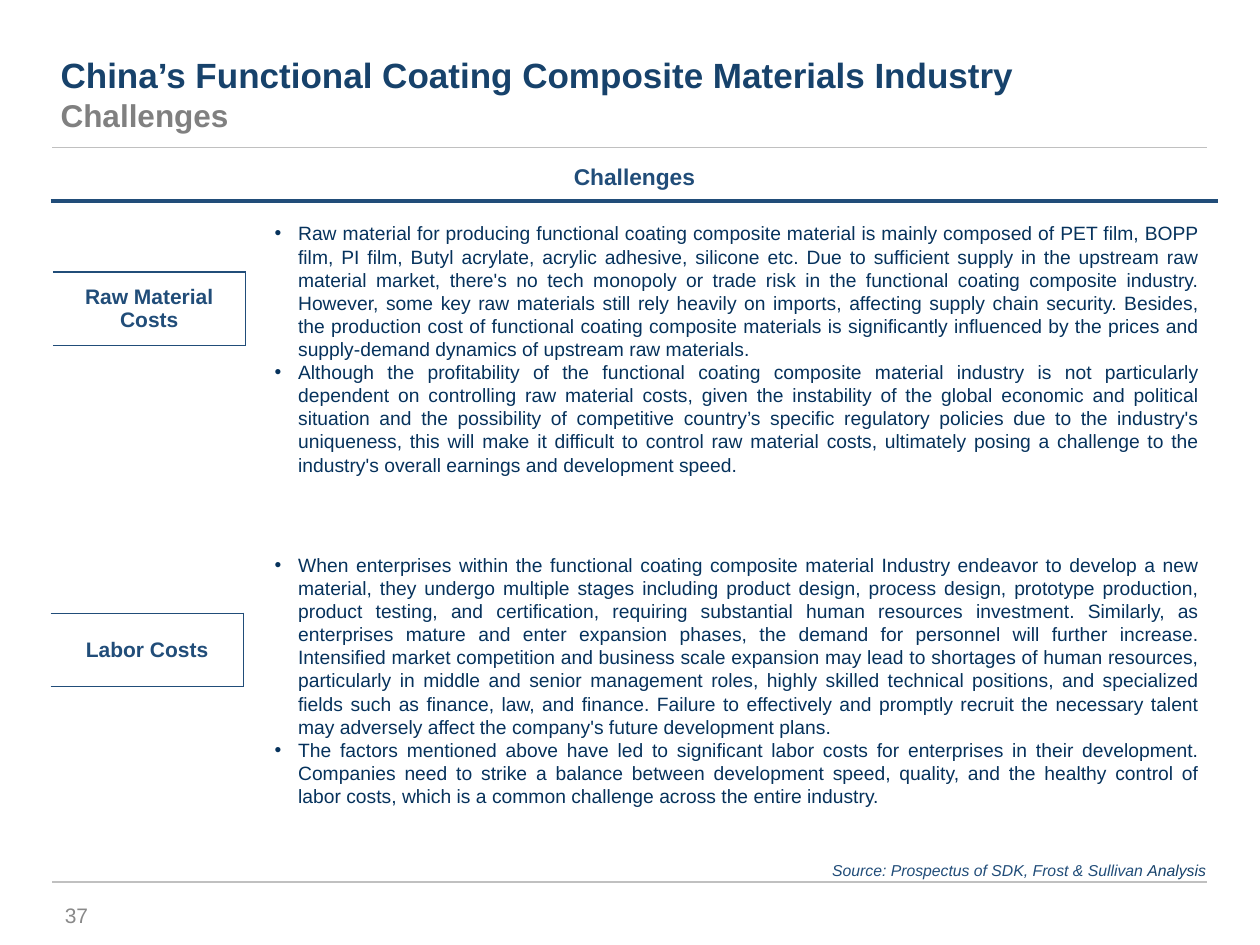
from dataclasses import dataclass

import pptx
import pptx.dml.color
import pptx.enum.text
import pptx.oxml
import pptx.oxml.ns
import pptx.util

Pt = pptx.util.Pt
ALIGN = pptx.enum.text.PP_ALIGN
ANCHOR = pptx.enum.text.MSO_ANCHOR
NS = pptx.oxml.ns.nsdecls("a")

NAVY, INK, DEEP = "214D79", "06325C", "17426B"
SILVER, GRAY, PAGE_GRAY, WHITE = "C0C0C0", "808080", "898989", "FFFFFF"
LABEL_WIDTH, LABEL_HEIGHT = 110.2, 41.8
BULLET_INDENT = 13.5


@dataclass
class Challenge:
    label: str
    label_left: float
    label_top: float
    body_top: float
    points: list[str]


CHALLENGES = [
    Challenge("Raw Material Costs", 30.2, 155.5, 123.1, [
        "Raw material for producing functional coating composite material is mainly "
        "composed of PET film, BOPP film, PI film, Butyl acrylate, acrylic adhesive, "
        "silicone etc. Due to sufficient supply in the upstream raw material market, "
        "there's no tech monopoly or trade risk in the functional coating composite "
        "industry. However, some key raw materials still rely heavily on imports, "
        "affecting supply chain security. Besides, the production cost of functional "
        "coating composite materials is significantly influenced by the prices and "
        "supply-demand dynamics of upstream raw materials.",
        "Although the profitability of the functional coating composite material "
        "industry is not particularly dependent on controlling raw material costs, "
        "given the instability of the global economic and political situation and the "
        "possibility of competitive country’s specific regulatory policies due to the "
        "industry's uniqueness, this will make it difficult to control raw material "
        "costs, ultimately posing a challenge to the industry's overall earnings and "
        "development speed.",
    ]),
    Challenge("Labor Costs", 29, 350.5, 312.5, [
        "When enterprises within the functional coating composite material Industry "
        "endeavor to develop a new material, they undergo multiple stages including "
        "product design, process design, prototype production, product testing, and "
        "certification, requiring substantial human resources investment. Similarly, "
        "as enterprises mature and enter expansion phases, the demand for personnel "
        "will further increase. Intensified market competition and business scale "
        "expansion may lead to shortages of human resources, particularly in middle "
        "and senior management roles, highly skilled technical positions, and "
        "specialized fields such as finance, law, and finance. Failure to effectively "
        "and promptly recruit the necessary talent may adversely affect the company's "
        "future development plans.",
        "The factors mentioned above have led to significant labor costs for "
        "enterprises in their development. Companies need to strike a balance between "
        "development speed, quality, and the healthy control of labor costs, which is "
        "a common challenge across the entire industry.",
    ]),
]


def rgb(color: str) -> pptx.dml.color.RGBColor:
    return pptx.dml.color.RGBColor.from_string(color)


def add_run(paragraph, text: str, size: float, color: str,
            bold: bool = False, italic: bool = False) -> None:
    run = paragraph.add_run()
    run.text = text
    run.font.name = "Arial"
    run.font.size = Pt(size)
    run.font.bold = bold
    run.font.italic = italic
    run.font.color.rgb = rgb(color)


def add_frame(slide, left: float, top: float, width: float, height: float):
    box = slide.shapes.add_textbox(Pt(left), Pt(top), Pt(width), Pt(height))
    box.text_frame.word_wrap = True
    return box.text_frame


def add_rule(slide, left: float, right: float, y: float, color: str, weight: float) -> None:
    rule = slide.shapes.add_connector(
        pptx.enum.shapes.MSO_CONNECTOR.STRAIGHT, Pt(left), Pt(y), Pt(right), Pt(y))
    rule.line.color.rgb = rgb(color)
    rule.line.width = Pt(weight)
    rule._element.spPr.append(pptx.oxml.parse_xml(f"<a:effectLst {NS}/>"))


def add_label(slide, challenge: Challenge) -> None:
    """One-cell table, open on its left side."""
    table = slide.shapes.add_table(
        1, 1, Pt(challenge.label_left), Pt(challenge.label_top),
        Pt(LABEL_WIDTH), Pt(LABEL_HEIGHT)).table
    table.first_row = table.horz_banding = False
    cell = table.cell(0, 0)
    cell.vertical_anchor = ANCHOR.MIDDLE
    cell.fill.solid()
    cell.fill.fore_color.rgb = rgb(WHITE)
    ink = f'<a:solidFill><a:srgbClr val="{NAVY}"/></a:solidFill>'
    borders = {"lnL": "<a:noFill/>", "lnR": ink, "lnT": ink, "lnB": ink}
    properties = cell._tc.get_or_add_tcPr()
    for position, (side, paint) in enumerate(borders.items()):
        properties.insert(position, pptx.oxml.parse_xml(
            f'<a:{side} {NS} w="{Pt(1)}">{paint}</a:{side}>'))
    paragraph = cell.text_frame.paragraphs[0]
    paragraph.alignment = ALIGN.CENTER
    add_run(paragraph, challenge.label, 12, NAVY, bold=True)


def add_points(slide, challenge: Challenge) -> None:
    frame = add_frame(slide, 149.8, challenge.body_top, 542.9, 154)
    for number, point in enumerate(challenge.points):
        paragraph = frame.add_paragraph() if number else frame.paragraphs[0]
        paragraph.alignment = ALIGN.JUSTIFY
        properties = paragraph._p.get_or_add_pPr()
        properties.set("marL", str(Pt(BULLET_INDENT)))
        properties.set("indent", str(-Pt(BULLET_INDENT)))
        properties.append(pptx.oxml.parse_xml(f'<a:buFont {NS} typeface="Arial"/>'))
        properties.append(pptx.oxml.parse_xml(f'<a:buChar {NS} char="•"/>'))
        add_run(paragraph, point, 11, INK)


def add_title(slide) -> None:
    title = slide.shapes.title
    title.left, title.top, title.width, title.height = Pt(27.4), Pt(29.5), Pt(684), Pt(48.2)
    frame = title.text_frame
    frame.auto_size = pptx.enum.text.MSO_AUTO_SIZE.NONE
    frame.vertical_anchor = ANCHOR.MIDDLE
    heading = frame.paragraphs[0]
    heading.alignment = ALIGN.LEFT
    add_run(heading, "China’s Functional Coating Composite Materials Industry", 20, DEEP, bold=True)
    heading.add_line_break()
    add_run(heading, "Challenges", 18, GRAY, bold=True)


def main() -> None:
    deck = pptx.Presentation()
    deck.slide_width, deck.slide_height = Pt(720), Pt(540)
    slide = deck.slides.add_slide(deck.slide_layouts[5])

    # Title and page frame
    add_title(slide)
    for y in (84.2, 504):
        add_rule(slide, 30, 690, y, SILVER, 0.75)
    page = add_frame(slide, 30, 505.4, 174, 34.6)
    page.vertical_anchor = ANCHOR.MIDDLE
    add_run(page.paragraphs[0], "37", 12, PAGE_GRAY)

    # Column heading
    heading = add_frame(slide, 276.5, 89.3, 172, 23).paragraphs[0]
    heading.alignment = ALIGN.CENTER
    add_run(heading, "Challenges", 13, NAVY, bold=True)
    add_rule(slide, 29, 696, 114.7, NAVY, 2.25)

    # Challenges
    for challenge in CHALLENGES:
        add_label(slide, challenge)
        add_points(slide, challenge)

    # Source line
    source = add_frame(slide, 237.6, 488.2, 458.6, 18).paragraphs[0]
    source.alignment = ALIGN.RIGHT
    add_run(source, "Source: Prospectus of SDK, Frost & Sullivan ", 9, NAVY, italic=True)
    add_run(source, "Analysis", 9, DEEP, italic=True)

    deck.save("out.pptx")


if __name__ == "__main__":
    main()
